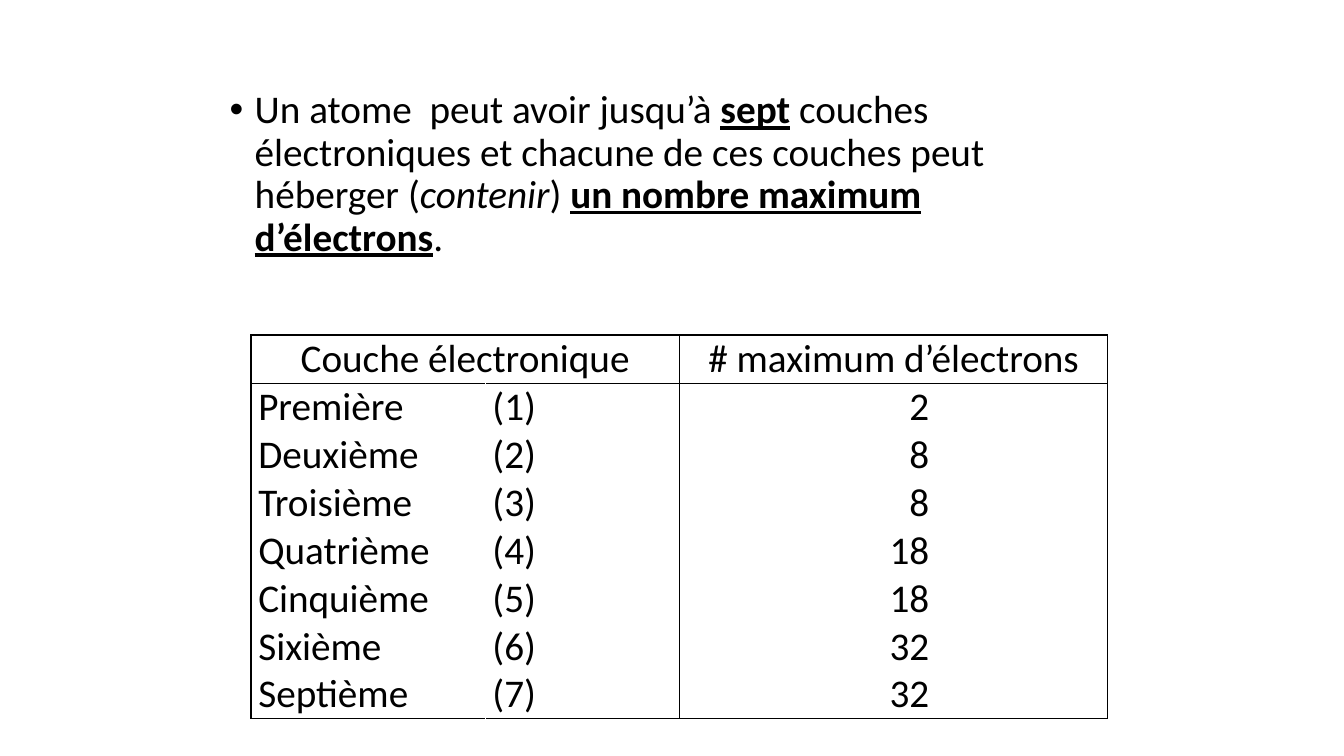
from pptx import Presentation
from pptx.dml.color import RGBColor as RGB
from pptx.enum.text import MSO_ANCHOR as Anchor, MSO_AUTO_SIZE as Auto, PP_ALIGN as Align
from pptx.oxml import parse_xml as to_xml
from pptx.oxml.ns import nsdecls as names
from pptx.util import Pt

SCALE = 9525
BLACK, WHITE = "000000", "FFFFFF"


def px(size):
    return size * SCALE


def color(code):
    return RGB.from_string(code)


def write(para, text, size=28, font="Calibri", ink=BLACK, bold=False, slant=False, under=False):
    run = para.add_run()
    run.text = text
    face = run.font
    face.name, face.size = font, Pt(size)
    face.bold, face.italic, face.underline = bold, slant, under
    face.color.rgb = color(ink)


class Page:
    def __init__(self, deck):
        self.slide = deck.slides.add_slide(deck.slide_layouts[1])
        title = self.slide.shapes.title.element
        title.getparent().remove(title)
        self.line = 12700
        self.inset = 7

    def body(self, box, runs):
        shape = self.slide.placeholders[1]
        shape.left, shape.top, shape.width, shape.height = map(px, box)
        frame = shape.text_frame
        frame.word_wrap = True
        frame.auto_size = Auto.NONE
        frame.vertical_anchor = Anchor.TOP
        para = frame.paragraphs[0]
        para.alignment = Align.LEFT
        para.line_spacing, para.space_before = 0.9, Pt(10)
        props = para._p.get_or_add_pPr()
        props.set("marL", str(px(24)))
        props.set("indent", str(px(-24)))
        props.append(to_xml(f'<a:buFont {names("a")} typeface="Arial"/>'))
        props.append(to_xml(f'<a:buChar {names("a")} char="•"/>'))
        for text, style in runs:
            write(para, text, **style)

    def table(self, left, top, cols, rows):
        grid = self.slide.shapes.add_table(
            len(rows), len(cols), px(left), px(top), px(sum(cols)), px(sum(rows))).table
        grid.first_row = grid.horz_banding = False
        for col, width in zip(grid.columns, cols):
            col.width = px(width)
        for row, height in zip(grid.rows, rows):
            row.height = px(height)
        return grid

    def cell(self, cell, lines, align, right=None, anchor=Anchor.TOP, edges=None):
        cell.margin_left = px(self.inset)
        cell.margin_right = px(right or self.inset)
        cell.margin_top = cell.margin_bottom = 0
        cell.vertical_anchor = anchor
        cell.fill.background()
        for nth, text in enumerate(lines):
            frame = cell.text_frame
            para = frame.add_paragraph() if nth else frame.paragraphs[0]
            para.alignment = align
            write(para, text)
        self.border(cell, edges or {})

    def border(self, cell, edges):
        props = cell._tc.get_or_add_tcPr()
        for nth, side in enumerate("LRTB"):
            ink = edges.get(side, BLACK)
            props.insert(nth, to_xml(
                f'<a:ln{side} {names("a")} w="{self.line}"><a:solidFill>'
                f'<a:srgbClr val="{ink}"/></a:solidFill></a:ln{side}>'))


def main():
    deck = Presentation()
    deck.slide_width, deck.slide_height = px(1280), px(720)
    page = Page(deck)
    strong = {"bold": True, "under": True}
    page.body((209, 81, 864, 234), [
        ("Un atome  peut avoir jusqu’à ", {}),
        ("sept", strong),
        (" couches électroniques et chacune de ces couches peut héberger (", {}),
        ("contenir", {"slant": True}),
        (") ", {}),
        ("un nombre maximum d’électrons", strong),
        (".", {}),
    ])

    shells = {"Première": 2, "Deuxième": 8, "Troisième": 8, "Quatrième": 18,
              "Cinquième": 18, "Sixième": 32, "Septième": 32}
    grid = page.table(239, 319, (223, 185, 408), (46, 319))
    grid.cell(0, 0).merge(grid.cell(0, 1))
    for col, text in ((0, "Couche électronique"), (2, "# maximum d’électrons")):
        page.cell(grid.cell(0, col), [text], Align.CENTER, anchor=Anchor.MIDDLE)
    page.border(grid.cell(0, 1), {})
    ranks = [f"({nth})" for nth in range(1, len(shells) + 1)]
    page.cell(grid.cell(1, 0), shells, Align.LEFT, edges={"R": WHITE})
    page.cell(grid.cell(1, 1), ranks, Align.LEFT, edges={"L": WHITE})
    page.cell(grid.cell(1, 2), map(str, shells.values()), Align.RIGHT, right=170)
    deck.save("out.pptx")


if __name__ == "__main__":
    main()
